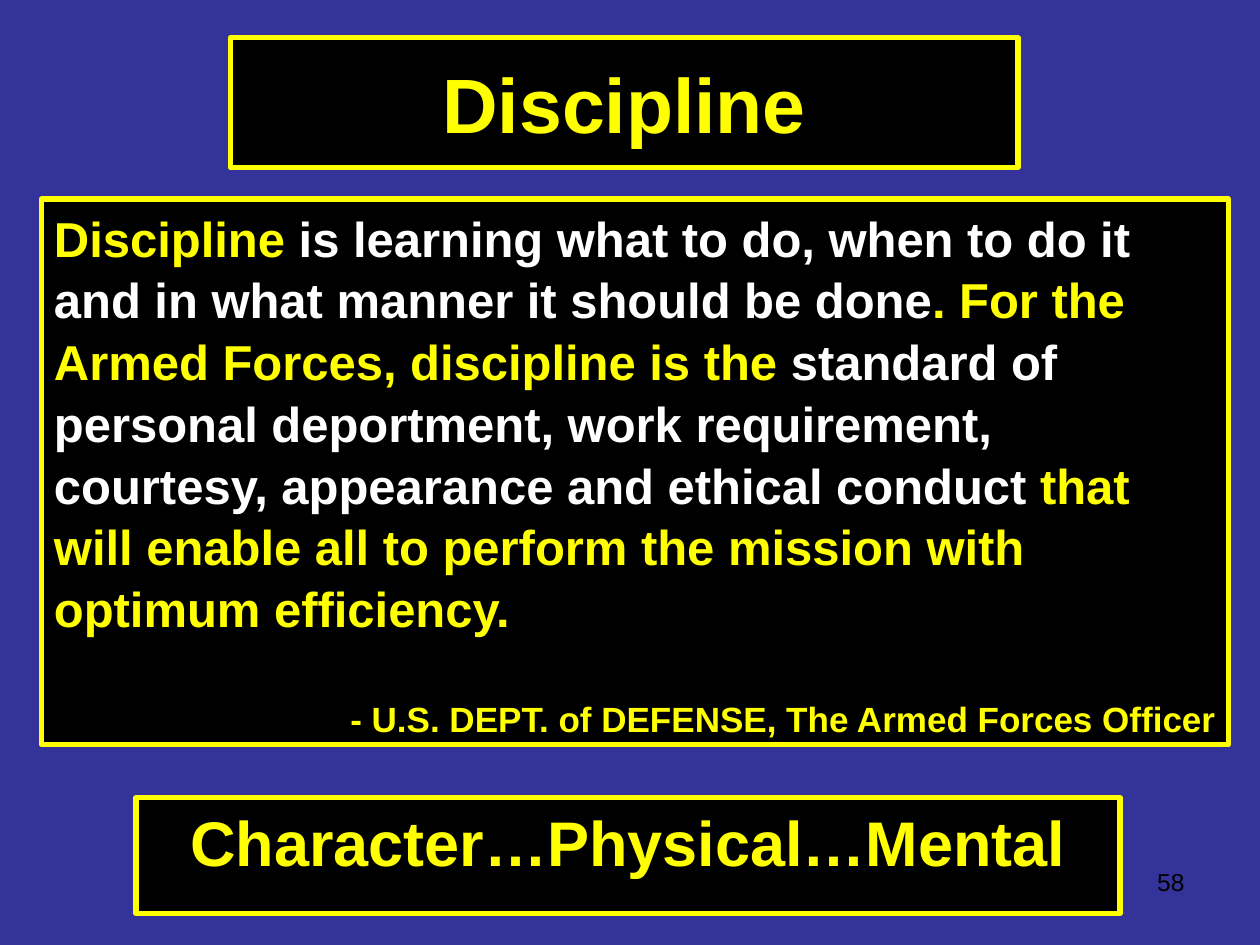
"""Build the Discipline slide with three framed panels and a page number."""
from typing import NamedTuple

from pptx import Presentation
from pptx.dml.color import RGBColor
from pptx.enum.shapes import MSO_SHAPE
from pptx.enum.text import MSO_ANCHOR, MSO_AUTO_SIZE, PP_ALIGN
from pptx.util import Inches, Pt

YELLOW, WHITE, BLACK, BLUE = "FFFF00", "FFFFFF", "000000", "333399"


class Area(NamedTuple):
    left: float
    top: float
    width: float
    height: float


class Span(NamedTuple):
    text: str
    color: str = YELLOW


TITLE_AREA = Area(1.83, 0.3, 6.25, 1.03)
QUOTE_AREA = Area(0.33, 1.58, 9.42, 4.33)
THEME_AREA = Area(1.08, 6.33, 7.81, 0.92)
NUMBER_AREA = Area(7.17, 6.83, 2.33, 0.52)

QUOTE = [
    Span("Discipline "),
    Span("is learning what to do, when to do it and in what manner it should be done", WHITE),
    Span(". For the Armed Forces, discipline is the "),
    Span("standard of personal deportment, work requirement, courtesy, "
         "appearance and ethical conduct", WHITE),
    Span(" that will enable all to perform the mission with optimum efficiency."),
]


def rgb(color: str) -> RGBColor:
    return RGBColor.from_string(color)


def lengths(area: Area) -> list:
    return [Inches(value) for value in area]


def write(para, spans: list[Span], size: float, bold: bool = True,
          align=PP_ALIGN.LEFT, before: float = 0, spacing: float = 1.0) -> None:
    para.alignment = align
    para.space_before = Pt(before)
    para.line_spacing = spacing
    for span in spans:
        run = para.add_run()
        run.text = span.text
        run.font.name = "Arial"
        run.font.size = Pt(size)
        run.font.bold = bold
        run.font.color.rgb = rgb(span.color)


def set_frame(box, anchor=MSO_ANCHOR.TOP):
    frame = box.text_frame
    frame.word_wrap = True
    frame.auto_size = MSO_AUTO_SIZE.NONE
    frame.vertical_anchor = anchor
    return frame


def style_panel(box) -> None:
    box.fill.solid()
    box.fill.fore_color.rgb = rgb(BLACK)
    box.line.color.rgb = rgb(YELLOW)
    box.line.width = Pt(3)


def add_panel(slide, area: Area):
    box = slide.shapes.add_shape(MSO_SHAPE.RECTANGLE, *lengths(area))
    box.shadow.inherit = False
    style_panel(box)
    return set_frame(box)


def main() -> None:
    deck = Presentation()
    deck.slide_width, deck.slide_height = Inches(10), Inches(7.5)
    slide = deck.slides.add_slide(deck.slide_layouts[5])
    slide.background.fill.solid()
    slide.background.fill.fore_color.rgb = rgb(BLUE)

    title = slide.shapes.title
    title.left, title.top, title.width, title.height = lengths(TITLE_AREA)
    style_panel(title)
    write(set_frame(title, MSO_ANCHOR.MIDDLE).paragraphs[0],
          [Span("Discipline")], 44, align=PP_ALIGN.CENTER)

    theme = add_panel(slide, THEME_AREA)
    write(theme.paragraphs[0], [Span("Character…Physical…Mental")], 36,
          align=PP_ALIGN.CENTER, before=4)

    number = set_frame(slide.shapes.add_textbox(*lengths(NUMBER_AREA)))
    write(number.paragraphs[0], [Span("58", BLACK)], 14, bold=False, align=PP_ALIGN.RIGHT)

    quote = add_panel(slide, QUOTE_AREA)
    write(quote.paragraphs[0], QUOTE, 28, spacing=1.05)
    write(quote.add_paragraph(), [Span("- U.S. DEPT. of DEFENSE, The Armed Forces Officer")],
          20, align=PP_ALIGN.RIGHT, before=33, spacing=1.05)

    deck.save("out.pptx")


if __name__ == "__main__":
    main()
